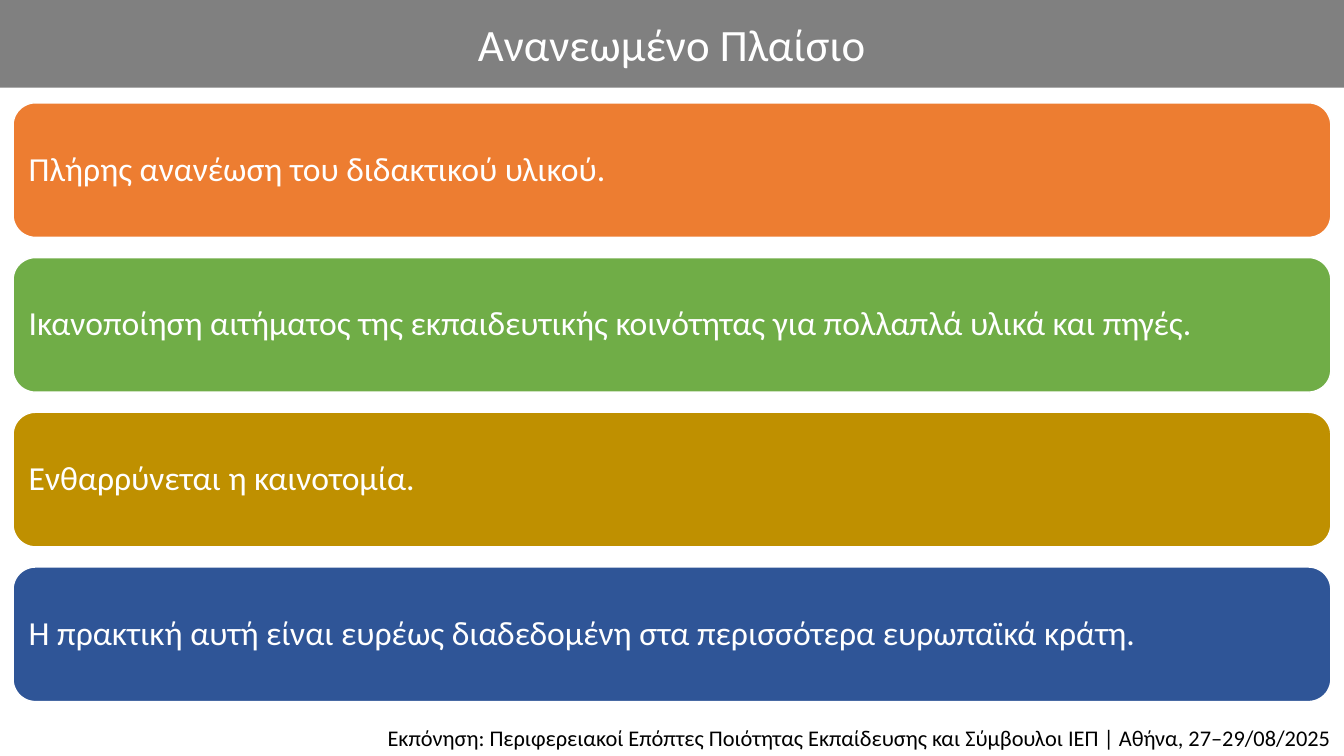
from pptx import Presentation
from pptx.dml.color import RGBColor
from pptx.enum.shapes import MSO_SHAPE
from pptx.enum.text import MSO_ANCHOR, PP_ALIGN
from pptx.util import Inches, Pt

WHITE = RGBColor(0xFF, 0xFF, 0xFF)
BLACK = RGBColor(0x00, 0x00, 0x00)
GRAY = RGBColor(0x80, 0x80, 0x80)
ORANGE = RGBColor(0xED, 0x7D, 0x31)
GREEN = RGBColor(0x70, 0xAD, 0x47)
GOLD = RGBColor(0xBF, 0x90, 0x00)
BLUE = RGBColor(0x2F, 0x55, 0x97)

FONT = "Calibri"
CARD_GAP = 0.2
CARD_MARGIN = 0.09

POINTS = [
    ("Πλήρης ανανέωση του διδακτικού υλικού.", ORANGE),
    ("Ικανοποίηση αιτήματος της εκπαιδευτικής κοινότητας για πολλαπλά υλικά και πηγές.", GREEN),
    ("Ενθαρρύνεται η καινοτομία.", GOLD),
    ("Η πρακτική αυτή είναι ευρέως διαδεδομένη στα περισσότερα ευρωπαϊκά κράτη.", BLUE),
]


def add_panel(slide, preset, box, fill, text, size, color, align, anchor, spacing=1.0):
    """Add a borderless filled panel with one line of text; box is in inches."""
    panel = slide.shapes.add_shape(preset, *[Inches(length) for length in box])
    panel.shadow.inherit = False
    panel.fill.solid()
    panel.fill.fore_color.rgb = fill
    panel.line.fill.background()
    frame = panel.text_frame
    frame.word_wrap = True
    frame.vertical_anchor = anchor
    paragraph = frame.paragraphs[0]
    paragraph.alignment = align
    paragraph.line_spacing = spacing
    run = paragraph.add_run()
    run.text = text
    run.font.name = FONT
    run.font.size = Pt(size)
    run.font.color.rgb = color
    return panel


def add_title_band(slide, box):
    add_panel(slide, MSO_SHAPE.RECTANGLE, box, GRAY, "Ανανεωμένο Πλαίσιο",
              32, WHITE, PP_ALIGN.CENTER, MSO_ANCHOR.MIDDLE)


def add_point_cards(slide, box):
    left, top, width, height = box
    card_height = (height - CARD_GAP * (len(POINTS) - 1)) / len(POINTS)
    for row, (point, fill) in enumerate(POINTS):
        card_top = top + row * (card_height + CARD_GAP)
        card = add_panel(slide, MSO_SHAPE.ROUNDED_RECTANGLE,
                         (left, card_top, width, card_height), fill, point,
                         24, WHITE, PP_ALIGN.LEFT, MSO_ANCHOR.MIDDLE, 0.9)
        card.line.color.rgb = WHITE
        card.line.width = Pt(1)
        frame = card.text_frame
        frame.margin_left = frame.margin_right = Inches(CARD_MARGIN)
        frame.margin_top = frame.margin_bottom = Inches(CARD_MARGIN)


def add_credit_line(slide, box):
    add_panel(slide, MSO_SHAPE.RECTANGLE, box, WHITE,
              "Εκπόνηση: Περιφερειακοί Επόπτες Ποιότητας Εκπαίδευσης και "
              "Σύμβουλοι ΙΕΠ | Αθήνα, 27–29/08/2025",
              16, BLACK, PP_ALIGN.RIGHT, MSO_ANCHOR.TOP, 1.1)


def main():
    deck = Presentation()
    deck.slide_width = Inches(13.33)
    deck.slide_height = Inches(7.5)
    slide = deck.slides.add_slide(deck.slide_layouts[6])

    # Title band, cards and credit line, from top to bottom
    add_title_band(slide, (0, 0, 13.33, 0.87))
    add_point_cards(slide, (0.13, 1.02, 13.07, 5.94))
    add_credit_line(slide, (0.03, 7.11, 13.27, 0.39))

    deck.save("out.pptx")


if __name__ == "__main__":
    main()
